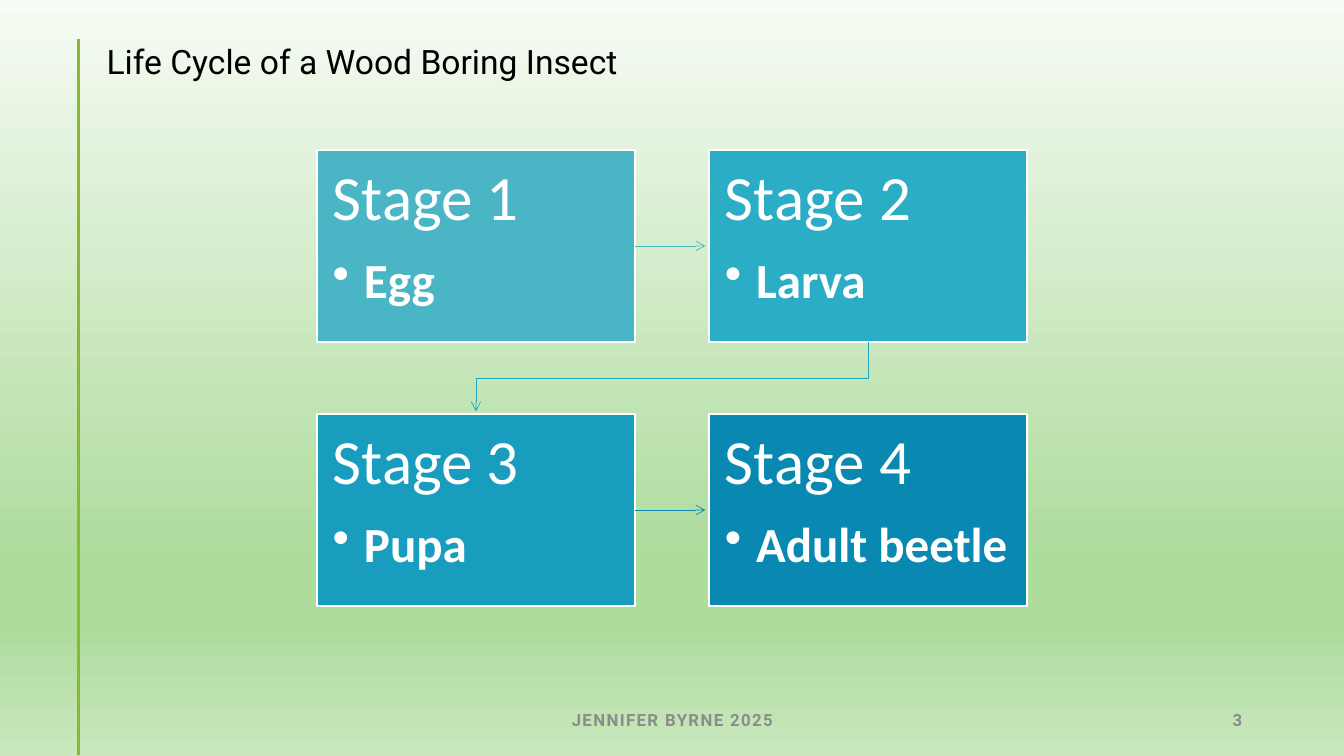
from dataclasses import dataclass

from lxml.etree import SubElement
from pptx import Presentation
from pptx.dml.color import RGBColor
from pptx.enum.shapes import MSO_CONNECTOR, MSO_SHAPE
from pptx.enum.text import MSO_ANCHOR, PP_ALIGN
from pptx.oxml.ns import qn
from pptx.util import Inches, Pt


@dataclass(frozen=True)
class Theme:
    heading_font: str = "Roboto"
    body_font: str = "Calibri"
    ink: str = "000000"
    muted: str = "8C8C8C"
    white: str = "FFFFFF"
    rule: str = "8AB833"
    sky: tuple = ((0, "F6FBF4"), (74, "AEDC9D"), (83, "AEDC9D"), (100, "C9E8BE"))
    boxes: tuple = ("4AB5C4", "2CADC6", "189DBE", "0989B1")
    arrows: tuple = ("4AB5C4", "22A5C2", "0989B1")
    title_size: float = 24
    footer_size: float = 12
    stage_size: float = 45
    name_size: float = 35
    inset: float = 0.16
    indent: float = 0.31


class SlideBuilder:
    def __init__(self, deck, theme):
        self.deck = deck
        self.theme = theme
        self.page = deck.slides.add_slide(deck.slide_layouts[6])

    def across(self, percent):
        return round(self.deck.slide_width * percent / 100)

    def down(self, percent):
        return round(self.deck.slide_height * percent / 100)

    def area(self, left, top, width, height):
        return self.across(left), self.down(top), self.across(width), self.down(height)

    def background(self, stops):
        fill = self.page.background.fill
        fill.gradient()
        fill.gradient_angle = 270
        stop_list = next(self.page.element.iter(qn("a:gsLst")))
        for stop in list(stop_list):
            stop_list.remove(stop)
        for percent, color in stops:
            stop = SubElement(stop_list, qn("a:gs"), pos=str(percent * 1000))
            SubElement(stop, qn("a:srgbClr"), val=color)

    def font(self, paragraph, name, size, color, bold=False):
        font = paragraph.font
        font.name, font.size, font.bold = name, Pt(size), bold
        font.color.rgb = RGBColor.from_string(color)
        return font

    def stroke(self, shape, color, width, arrow=False):
        shape.line.color.rgb = RGBColor.from_string(color)
        shape.line.width = Pt(width)
        if arrow:
            outline = shape.element.spPr.find(qn("a:ln"))
            SubElement(outline, qn("a:tailEnd"), type="arrow")

    def line(self, start, end, color, width, arrow=False):
        connector = self.page.shapes.add_connector(
            MSO_CONNECTOR.STRAIGHT,
            self.across(start[0]), self.down(start[1]),
            self.across(end[0]), self.down(end[1]),
        )
        self.stroke(connector, color, width, arrow)
        SubElement(connector.element.spPr, qn("a:effectLst"))

    def bent_arrow(self, points, color, width):
        start, *rest = [(self.across(x), self.down(y)) for x, y in points]
        outline = self.page.shapes.build_freeform(*start)
        outline.add_line_segments(rest, close=False)
        shape = outline.convert_to_shape()
        shape.fill.background()
        self.stroke(shape, color, width, arrow=True)
        shape.shadow.inherit = False

    def text(self, area, words, size, color, align=PP_ALIGN.LEFT, bold=False, tracking=0):
        frame = self.page.shapes.add_textbox(*self.area(*area)).text_frame
        frame.word_wrap = True
        frame.vertical_anchor = MSO_ANCHOR.MIDDLE
        para = frame.paragraphs[0]
        para.text = words
        para.alignment = align
        para.line_spacing = 0.9
        font = self.font(para, self.theme.heading_font, size, color, bold)
        if tracking:
            font._element.set("spc", str(tracking * 100))

    def stage_box(self, area, heading, name, color):
        theme = self.theme
        box = self.page.shapes.add_shape(MSO_SHAPE.RECTANGLE, *self.area(*area))
        box.shadow.inherit = False
        box.fill.solid()
        box.fill.fore_color.rgb = RGBColor.from_string(color)
        self.stroke(box, theme.white, 1.5)
        frame = box.text_frame
        frame.word_wrap = True
        frame.vertical_anchor = MSO_ANCHOR.TOP
        frame.margin_left = frame.margin_right = Inches(theme.inset)
        frame.margin_top = frame.margin_bottom = Inches(theme.inset)
        title, item = frame.paragraphs[0], frame.add_paragraph()
        item.level = 1
        properties = item._p.get_or_add_pPr()
        properties.set("marL", str(Inches(theme.indent)))
        properties.set("indent", str(-Inches(theme.indent)))
        SubElement(properties, qn("a:buChar"), char="•")
        for para, words, size, after, bold in (
            (title, heading, theme.stage_size, 0.35, False),
            (item, name, theme.name_size, 0.15, True),
        ):
            para.text = words
            para.alignment = PP_ALIGN.LEFT
            para.line_spacing = 0.9
            para.space_after = Pt(size * after)
            self.font(para, theme.body_font, size, theme.white, bold)


def main():
    theme = Theme()
    deck = Presentation()
    deck.slide_width, deck.slide_height = Inches(13.33), Inches(7.5)
    slide = SlideBuilder(deck, theme)

    slide.background(theme.sky)
    slide.line((5.85, 5.2), (5.85, 99.87), theme.rule, 2)
    slide.text((7.2, 4, 61.74, 8.93), "Life Cycle of a Wood Boring Insect",
               theme.title_size, theme.ink)
    for left, width, words, align in (
        (33.16, 33.76, "JENNIFER BYRNE 2025", PP_ALIGN.CENTER),
        (70.67, 22.5, "3", PP_ALIGN.RIGHT),
    ):
        slide.text((left, 92.67, width, 5.33), words, theme.footer_size, theme.muted,
                   align, bold=True, tracking=1)

    left, top, width, height = 23.56, 19.87, 23.71, 25.33
    column_step, row_step = 29.18, 34.93
    for index, name in enumerate(("Egg", "Larva", "Pupa", "Adult beetle")):
        row, column = divmod(index, 2)
        area = (left + column * column_step, top + row * row_step, width, height)
        slide.stage_box(area, f"Stage {index + 1}", name, theme.boxes[index])

    first_arrow, return_arrow, last_arrow = theme.arrows
    for row, color in enumerate((first_arrow, last_arrow)):
        middle = top + row * row_step + height / 2
        slide.line((left + width, middle), (left + column_step - 0.25, middle),
                   color, 0.5, arrow=True)

    pupa_center = left + width / 2
    larva_center = pupa_center + column_step
    slide.bent_arrow(
        ((larva_center, top + height), (larva_center, 50),
         (pupa_center, 50), (pupa_center, top + row_step - 0.4)),
        return_arrow, 0.5,
    )
    deck.save("out.pptx")


if __name__ == "__main__":
    main()
